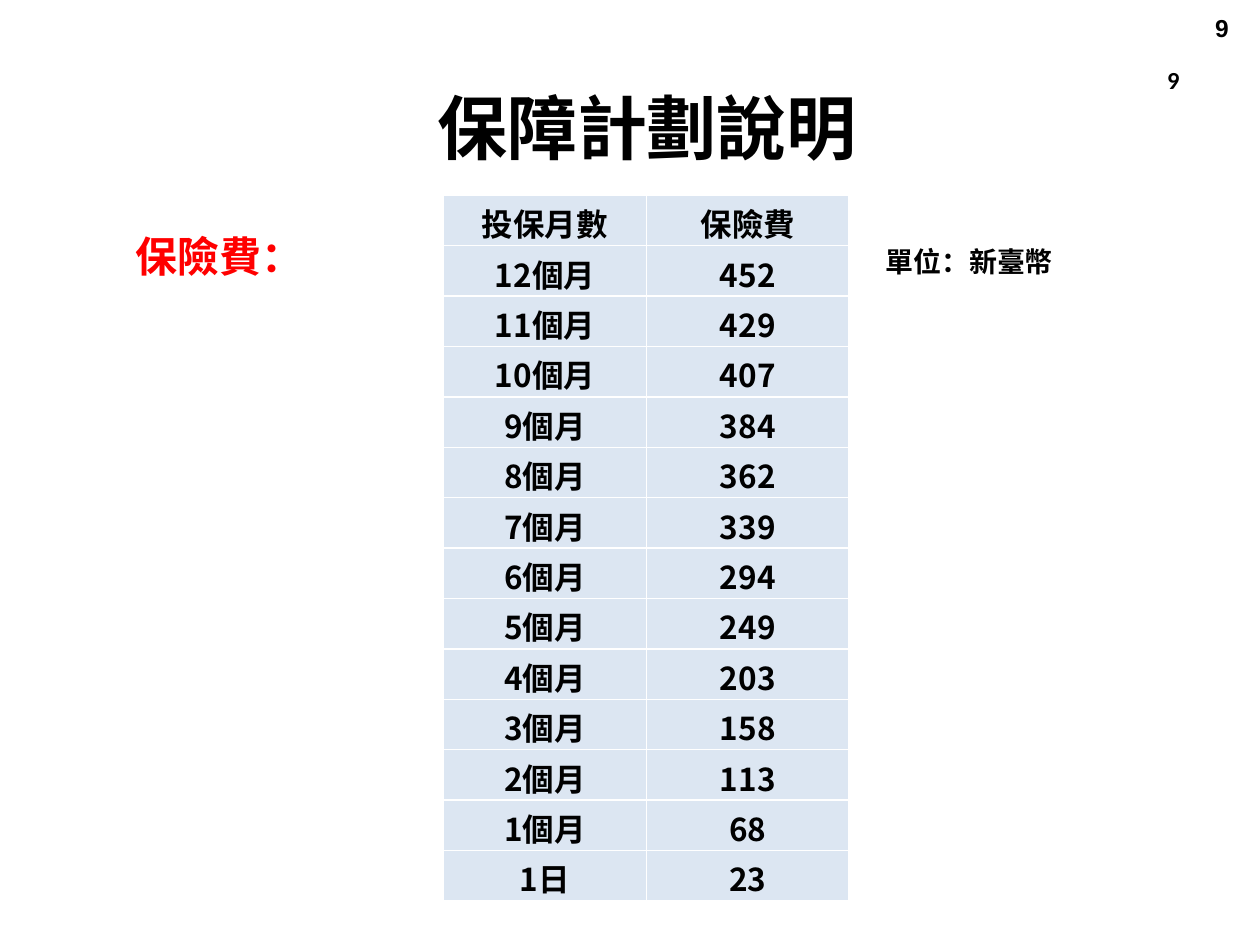
from dataclasses import dataclass

from pptx import Presentation
from pptx.dml.color import RGBColor
from pptx.enum.text import MSO_ANCHOR, PP_ALIGN
from pptx.oxml.ns import qn
from pptx.oxml.xmlchemy import OxmlElement
from pptx.util import Inches, Pt


@dataclass(frozen=True)
class Theme:
    black: RGBColor = RGBColor(0x00, 0x00, 0x00)
    red: RGBColor = RGBColor(0xFF, 0x00, 0x00)
    cell_fill: RGBColor = RGBColor(0xDC, 0xE6, 0xF2)
    cjk: str = "Noto Sans CJK SC"
    title_size: int = 40
    label_size: int = 24
    table_size: int = 18
    unit_size: int = 16
    number_size: int = 14


THEME = Theme()


@dataclass(frozen=True)
class TextSpec:
    text: str
    left: float
    top: float
    width: float
    height: float
    size: int
    align: PP_ALIGN
    font: str = THEME.cjk
    wrap: bool = True


@dataclass(frozen=True)
class Premium:
    period: str
    amount: int


PAGE_NUMBERS = [
    TextSpec("9", 7.13, 0.47, 2.33, 0.52, THEME.number_size, PP_ALIGN.RIGHT, "Calibri"),
    TextSpec("9", 7.52, 0.05, 2.33, 0.52, THEME.number_size, PP_ALIGN.RIGHT, "Arial"),
]
TITLE = TextSpec("保障計劃說明", 3.35, 0.62, 3.57, 0.77, THEME.title_size,
                 PP_ALIGN.CENTER, wrap=False)
PREMIUM_LABEL = TextSpec("保險費：", 0.98, 1.78, 8.9, 0.91, THEME.label_size, PP_ALIGN.LEFT)
UNIT_TAB = 5.95

# Premiums for 12 months down to 1 month, then for a single day
MONTHLY = [452, 429, 407, 384, 362, 339, 294, 249, 203, 158, 113, 68]
PREMIUMS = [Premium(f"{12 - i}個月", amount) for i, amount in enumerate(MONTHLY)]
PREMIUMS.append(Premium("1日", 23))


def style_paragraph(paragraph, size: int, align: PP_ALIGN, font: str = THEME.cjk,
                    color: RGBColor = THEME.black) -> None:
    paragraph.alignment = align
    paragraph.font.name = font
    paragraph.font.size = Pt(size)
    paragraph.font.bold = True
    paragraph.font.color.rgb = color
    east_asian = OxmlElement("a:ea")
    east_asian.set("typeface", font)
    defaults = paragraph._p.pPr.find(qn("a:defRPr"))
    defaults.find(qn("a:latin")).addnext(east_asian)


def add_text(slide, spec: TextSpec, color: RGBColor = THEME.black):
    box = slide.shapes.add_textbox(Inches(spec.left), Inches(spec.top),
                                   Inches(spec.width), Inches(spec.height))
    box.text_frame.word_wrap = spec.wrap
    paragraph = box.text_frame.paragraphs[0]
    paragraph.add_run().text = spec.text
    style_paragraph(paragraph, spec.size, spec.align, spec.font, color)
    return paragraph


def add_unit(paragraph) -> None:
    """Put the currency unit on the label's line, at a tab stop."""
    stops = OxmlElement("a:tabLst")
    stop = OxmlElement("a:tab")
    stop.set("pos", str(Inches(UNIT_TAB)))
    stop.set("algn", "l")
    stops.append(stop)
    paragraph._p.pPr.find(qn("a:defRPr")).addprevious(stops)
    unit = paragraph.add_run()
    unit.text = "\t單位：新臺幣"
    unit.font.size = Pt(THEME.unit_size)
    unit.font.color.rgb = THEME.black


def add_premium_table(slide, premiums: list[Premium]) -> None:
    rows = [("投保月數", "保險費")] + [(p.period, str(p.amount)) for p in premiums]
    table = slide.shapes.add_table(len(rows), 2, Inches(3.52), Inches(1.55),
                                   Inches(3.22), Inches(0.4 * len(rows))).table
    for row, texts in enumerate(rows):
        for column, text in enumerate(texts):
            cell = table.cell(row, column)
            cell.fill.solid()
            cell.fill.fore_color.rgb = THEME.cell_fill
            cell.margin_top = cell.margin_bottom = 0
            cell.vertical_anchor = MSO_ANCHOR.BOTTOM
            cell.text = text
            style_paragraph(cell.text_frame.paragraphs[0], THEME.table_size, PP_ALIGN.CENTER)


def main() -> None:
    presentation = Presentation()
    presentation.slide_width = Inches(10)
    presentation.slide_height = Inches(7.5)
    slide = presentation.slides.add_slide(presentation.slide_layouts[6])

    # Page numbers and title
    for spec in [*PAGE_NUMBERS, TITLE]:
        add_text(slide, spec)

    # Premium label with its unit
    add_unit(add_text(slide, PREMIUM_LABEL, THEME.red))

    # Premium table
    add_premium_table(slide, PREMIUMS)

    presentation.save("out.pptx")


if __name__ == "__main__":
    main()
